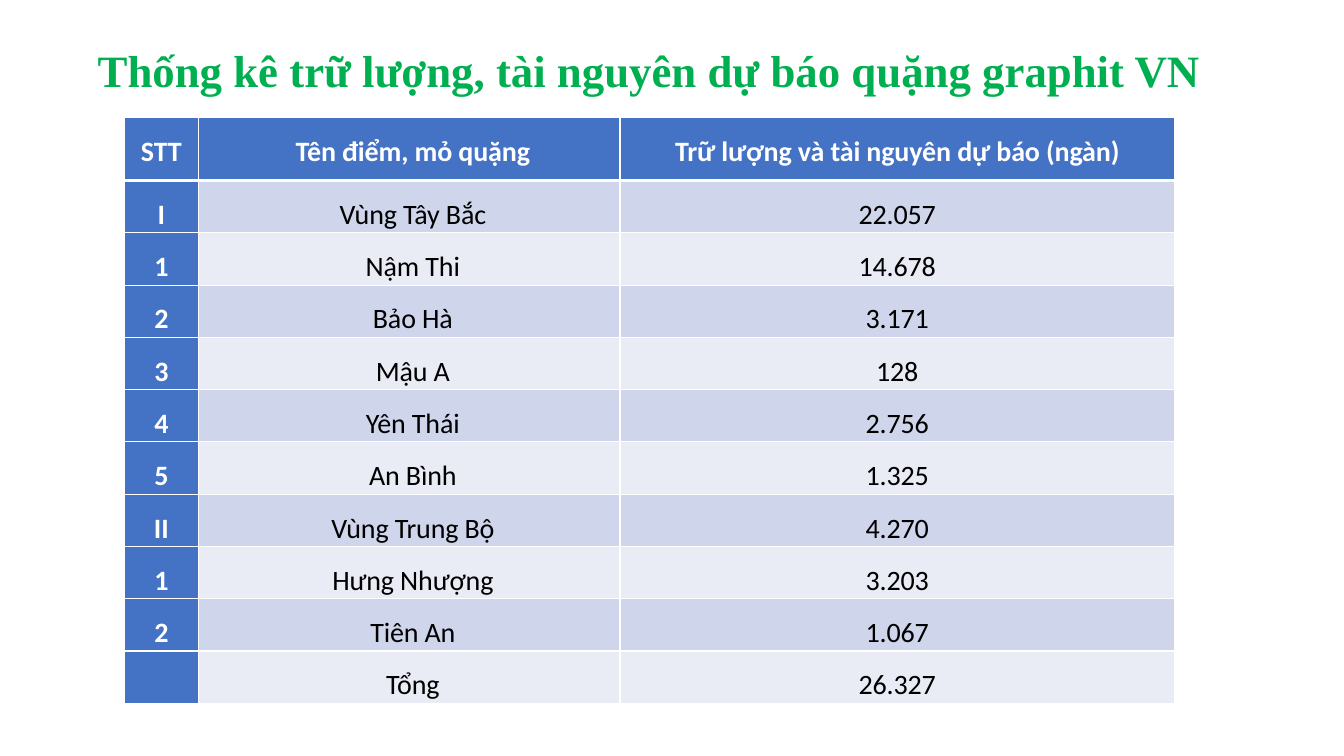
from lxml import etree
from pptx import Presentation
from pptx import util as u
from pptx.dml.color import RGBColor
from pptx.enum import text as t
from pptx.oxml import ns

WHITE = RGBColor(0xFF, 0xFF, 0xFF)
BLACK = RGBColor(0, 0, 0)
GREEN = RGBColor(0x00, 0xB0, 0x50)
BLUE = RGBColor(0x44, 0x72, 0xC4)
BANDS = RGBColor(0xCF, 0xD5, 0xEA), RGBColor(0xE9, 0xEB, 0xF5)

COLUMN_WIDTHS = 53.3, 301, 396
HEADER_HEIGHT, ROW_HEIGHT = 45.2, 37.35
NAME_INDENT = 5

RESERVES = [
    ("STT", "Tên điểm, mỏ quặng", "Trữ lượng và tài nguyên dự báo (ngàn)"),
    ("I", "Vùng Tây Bắc", "22.057"),
    ("1", "Nậm Thi", "14.678"),
    ("2", "Bảo Hà", "3.171"),
    ("3", "Mậu A", "128"),
    ("4", "Yên Thái", "2.756"),
    ("5", "An Bình", "1.325"),
    ("II", "Vùng Trung Bộ", "4.270"),
    ("1", "Hưng Nhượng", "3.203"),
    ("2", "Tiên An", "1.067"),
    ("", "Tổng", "26.327"),
]


def write_text(frame, words, *, font, size, color, bold=False, line_spacing=1.0,
               space_before=0, indent=0, tracking=0):
    """Write one centred paragraph; tracking is in hundredths of a point."""
    paragraph = frame.paragraphs[0]
    paragraph.alignment = t.PP_ALIGN.CENTER
    paragraph.line_spacing = line_spacing
    paragraph.space_before = u.Pt(space_before)
    if indent:
        properties = paragraph._p.get_or_add_pPr()
        properties.set("marL", str(u.Pt(indent)))
        properties.set("indent", "0")
    if not words:
        return
    run = paragraph.add_run()
    run.text = words
    run.font.name = font
    run.font.size = u.Pt(size)
    run.font.bold = bold
    run.font.color.rgb = color
    if tracking:
        run._r.get_or_add_rPr().set("spc", str(tracking))


def set_borders(cell, top=1, bottom=1):
    """Give the cell white borders; must run before the fill is set."""
    properties = cell._tc.get_or_add_tcPr()
    for side, width in (("L", 1), ("R", 1), ("T", top), ("B", bottom)):
        line = etree.SubElement(properties, ns.qn(f"a:ln{side}"), w=str(u.Pt(width)))
        fill = etree.SubElement(line, ns.qn("a:solidFill"))
        etree.SubElement(fill, ns.qn("a:srgbClr"), val=str(WHITE))


def add_title(slide, left, top, width, height):
    box = slide.shapes.add_textbox(u.Pt(left), u.Pt(top), u.Pt(width), u.Pt(height))
    frame = box.text_frame
    frame.word_wrap = True
    frame.vertical_anchor = t.MSO_ANCHOR.BOTTOM
    write_text(frame, "Thống kê trữ lượng, tài nguyên dự báo quặng graphit VN",
               font="Times New Roman", size=32, color=GREEN, bold=True,
               line_spacing=0.9)


def add_reserves_table(slide, left, top):
    height = HEADER_HEIGHT + ROW_HEIGHT * (len(RESERVES) - 1)
    table = slide.shapes.add_table(
        len(RESERVES), len(COLUMN_WIDTHS), u.Pt(left), u.Pt(top),
        u.Pt(sum(COLUMN_WIDTHS)), u.Pt(height)).table
    for column, width in zip(table.columns, COLUMN_WIDTHS):
        column.width = u.Pt(width)

    for row_index, values in enumerate(RESERVES):
        is_header = row_index == 0
        table.rows[row_index].height = u.Pt(HEADER_HEIGHT if is_header else ROW_HEIGHT)
        for column_index, value in enumerate(values):
            cell = table.cell(row_index, column_index)
            cell.margin_left = cell.margin_right = 0
            cell.margin_top = cell.margin_bottom = 0

            # Header row and number column are blue, the rest is banded
            is_heading = is_header or column_index == 0
            set_borders(cell, top=3 if row_index == 1 else 1,
                        bottom=3 if is_header else 1)
            cell.fill.solid()
            cell.fill.fore_color.rgb = BLUE if is_heading else BANDS[(row_index - 1) % 2]
            write_text(cell.text_frame, value, font="Calibri", size=20,
                       color=WHITE if is_heading else BLACK, bold=is_heading,
                       line_spacing=1.5, space_before=1.9, tracking=-10,
                       indent=NAME_INDENT if column_index == 1 else 0)


def main():
    presentation = Presentation()
    presentation.slide_width, presentation.slide_height = u.Pt(960), u.Pt(540)
    slide = presentation.slides.add_slide(presentation.slide_layouts[6])
    add_reserves_table(slide, 88.6, 83.8)
    add_title(slide, 38.2, 19.4, 851, 53.3)
    presentation.save("out.pptx")


if __name__ == "__main__":
    main()
